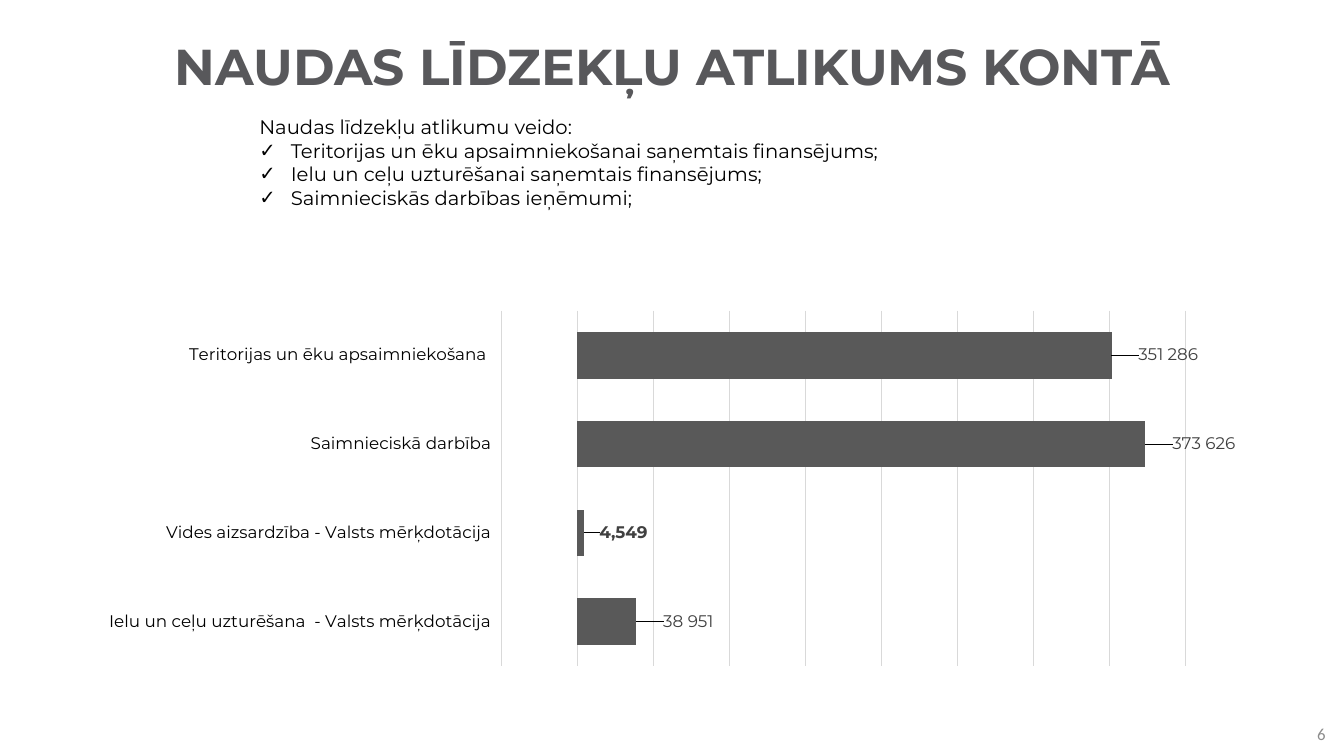
import pptx
import pptx.chart.data
import pptx.dml.color
import pptx.enum.chart
import pptx.enum.text
import pptx.oxml
import pptx.oxml.ns
import pptx.util

Pt = pptx.util.Pt
Align = pptx.enum.text.PP_ALIGN
Anchor = pptx.enum.text.MSO_ANCHOR
qn = pptx.oxml.ns.qn

COLORS = {"title": "58585B", "text": "000000", "bar": "595959",
          "label": "404040", "grid": "D9D9D9", "number": "8C8C8C"}
BALANCES = [("Ielu un ceļu uzturēšana  - Valsts mērķdotācija", 38951, "38 951", 0.02),
            ("Vides aizsardzība - Valsts mērķdotācija", 4549, None, 0.01),
            ("Saimnieciskā darbība", 373626, "373 626", 0.02),
            ("Teritorijas un ēku apsaimniekošana ", 351286, "351 286", 0.02)]
SOURCES = ["Teritorijas un ēku apsaimniekošanai saņemtais finansējums;",
           "Ielu un ceļu uzturēšanai saņemtais finansējums;",
           "Saimnieciskās darbības ieņēmumi;"]


def color(name):
    return pptx.dml.color.RGBColor.from_string(COLORS[name])


def manual_layout(**values):
    layout = pptx.oxml.parse_xml(
        '<c:layout xmlns:c="http://schemas.openxmlformats.org/drawingml/2006/chart">'
        '<c:manualLayout/></c:layout>')
    for tag, value in values.items():
        child = layout[0].makeelement(qn(f"c:{tag}"), {"val": str(value)})
        layout[0].append(child)
    return layout


class SlideBuilder:
    face = "Montserrat"

    def __init__(self, deck):
        self.page = deck.slides.add_slide(deck.slide_layouts[1])

    def style(self, font, size, tone, bold=False, face=None):
        font.name = face or self.face
        font.size = Pt(size)
        font.bold = bold
        font.color.rgb = color(tone)

    def place(self, shape, left, top, width, height, anchor):
        shape.left, shape.top = Pt(left), Pt(top)
        shape.width, shape.height = Pt(width), Pt(height)
        frame = shape.text_frame
        frame.word_wrap = True
        frame.auto_size = pptx.enum.text.MSO_AUTO_SIZE.NONE
        frame.vertical_anchor = anchor
        return frame

    def title(self, text, *bounds):
        frame = self.place(self.page.shapes.title, *bounds, Anchor.MIDDLE)
        frame.text = text
        para = frame.paragraphs[0]
        para.alignment = Align.CENTER
        para.line_spacing = 0.9
        self.style(para.font, 36, "title", bold=True)

    def checklist(self, heading, items, *bounds):
        frame = self.place(self.page.placeholders[1], *bounds, Anchor.TOP)
        frame.text = "\n".join([heading, *items])
        for index, para in enumerate(frame.paragraphs):
            para.alignment = Align.JUSTIFY
            para.space_before = Pt(0)
            self.style(para.font, 14, "text")
            indent = Pt(22.5) if index else 0
            properties = para._p.get_or_add_pPr()
            properties.set("marL", str(indent))
            properties.set("indent", str(-indent))
            tag, attributes = ("a:buChar", {"char": "✓"}) if index else ("a:buNone", {})
            bullet = properties.makeelement(qn(tag), attributes)
            properties.find(qn("a:defRPr")).addprevious(bullet)

    def page_number(self, text, *bounds):
        box = self.page.shapes.add_textbox(0, 0, 0, 0)
        frame = self.place(box, *bounds, Anchor.MIDDLE)
        frame.text = text
        para = frame.paragraphs[0]
        para.alignment = Align.RIGHT
        self.style(para.font, 12, "number", face="Calibri")

    def bar_chart(self, balances, left, top, width, height):
        data = pptx.chart.data.CategoryChartData(number_format="#,##0")
        data.categories = [name for name, *_ in balances]
        data.add_series("Series 1", [value for _, value, *_ in balances])
        chart = self.page.shapes.add_chart(
            pptx.enum.chart.XL_CHART_TYPE.BAR_CLUSTERED,
            Pt(left), Pt(top), Pt(width), Pt(height), data).chart
        chart.has_legend = False
        chart.has_title = False
        self.style(chart.font, 10, "text", face="Calibri")
        self.axes(chart)

        area = chart._chartSpace.chart.plotArea
        for layout in area.findall(qn("c:layout")):
            area.remove(layout)
        area.insert(0, manual_layout(layoutTarget="inner", xMode="edge", yMode="edge",
                                     x=0.35, y=0.13, w=0.6, h=0.8))
        plot = chart.plots[0]
        plot.gap_width = 90
        plot.vary_by_categories = False
        self.bars(plot.series[0], balances)

    def axes(self, chart):
        names = chart.category_axis
        names.tick_label_position = pptx.enum.chart.XL_TICK_LABEL_POSITION.LOW
        names.major_tick_mark = pptx.enum.chart.XL_TICK_MARK.NONE
        names.format.line.fill.background()
        self.style(names.tick_labels.font, 12, "text")
        amounts = chart.value_axis
        amounts.visible = False
        amounts.minimum_scale = -50000
        amounts.maximum_scale = 400000
        amounts.major_unit = 50000
        amounts.has_major_gridlines = True
        grid = amounts.major_gridlines.format.line
        grid.color.rgb = color("grid")
        grid.width = Pt(0.75)

    def bars(self, series, balances):
        outside = pptx.enum.chart.XL_LABEL_POSITION.OUTSIDE_END
        series.format.fill.solid()
        series.format.fill.fore_color.rgb = color("bar")
        labels = series.data_labels
        labels.show_value = True
        labels.number_format = "#,##0"
        labels.number_format_is_linked = False
        labels.position = outside
        self.style(labels.font, 12, "label", bold=True)
        for index, (_, _, text, shift) in enumerate(balances):
            label = series.points[index].data_label
            if text:
                label.text_frame.text = text
                span = label.text_frame.paragraphs[0].runs[0]
                self.style(span.font, 12, "label")
            else:
                self.style(label.font, 12, "label", bold=True)
            label.position = outside
        entries = series._element.iter(qn("c:dLbl"))
        for entry, (*_, shift) in zip(entries, balances):
            entry.find(qn("c:idx")).addnext(manual_layout(x=shift, y=0))


def main():
    deck = pptx.Presentation()
    deck.slide_width, deck.slide_height = Pt(960), Pt(540)
    builder = SlideBuilder(deck)
    builder.title("NAUDAS LĪDZEKĻU ATLIKUMS KONTĀ", 67, 16, 826.5, 67)
    builder.page_number("6", 738, 510, 216, 28.8)
    builder.bar_chart(BALANCES, 72.7, 180.7, 815, 317.5)
    builder.checklist("Naudas līdzekļu atlikumu veido:", SOURCES, 178, 78.5, 828, 75)
    deck.save("out.pptx")


if __name__ == "__main__":
    main()
